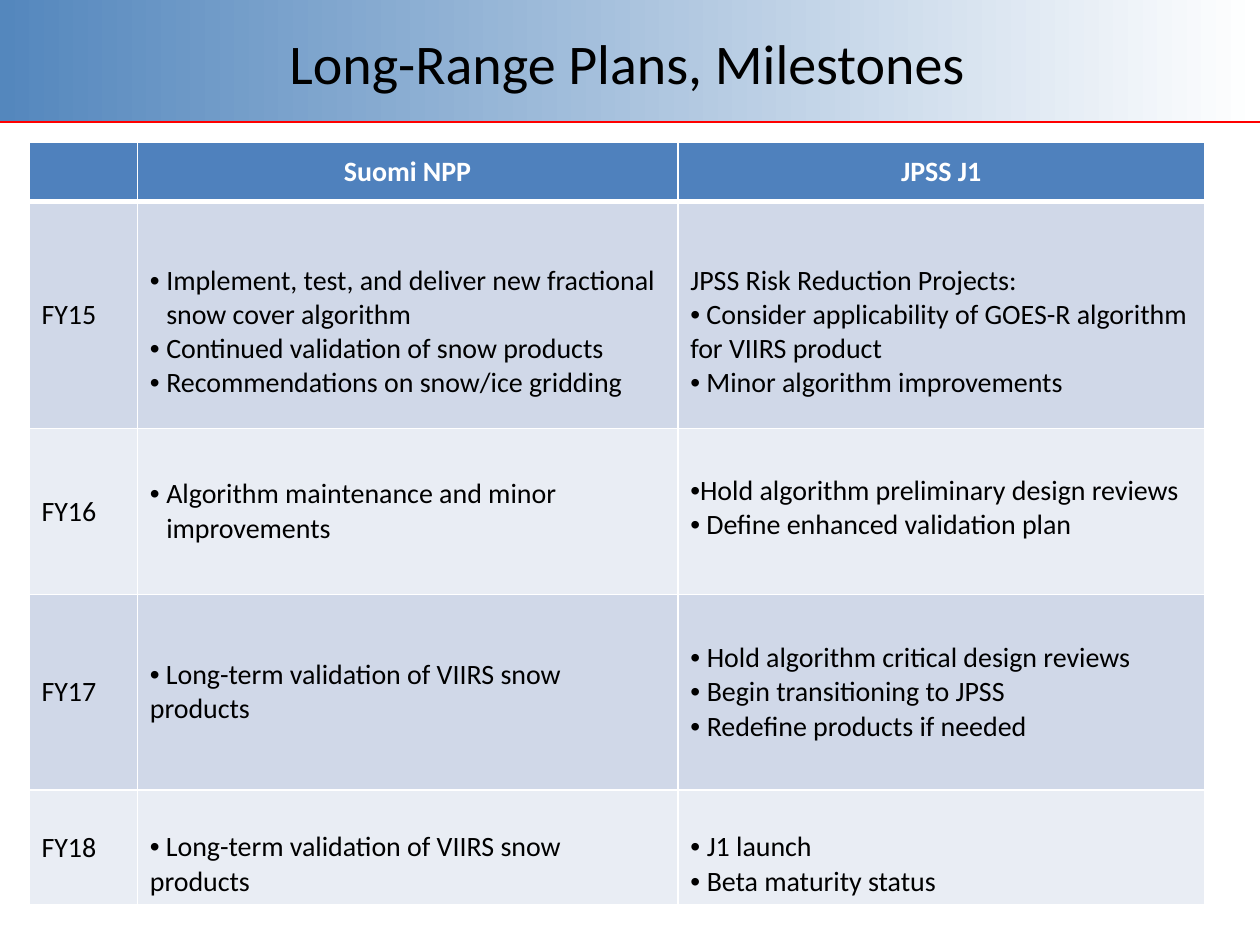
"""Build the long-range plans and milestones slide."""
from lxml import etree
from pptx import Presentation
from pptx.dml.color import RGBColor
from pptx.enum.shapes import MSO_CONNECTOR, MSO_SHAPE
from pptx.enum.text import MSO_ANCHOR, PP_ALIGN
from pptx.oxml.ns import qn
from pptx.util import Inches, Pt

CENTER, LEFT = PP_ALIGN.CENTER, PP_ALIGN.LEFT
MIDDLE = MSO_ANCHOR.MIDDLE
RECTANGLE, STRAIGHT = MSO_SHAPE.RECTANGLE, MSO_CONNECTOR.STRAIGHT

BLACK = RGBColor(0x00, 0x00, 0x00)
WHITE = RGBColor(0xFF, 0xFF, 0xFF)
RED = RGBColor(0xFF, 0x00, 0x00)
BANNER_BLUE = RGBColor(0x54, 0x87, 0xBD)
HEADER_BLUE = RGBColor(0x4F, 0x81, 0xBD)
BANDS = (RGBColor(0xD0, 0xD8, 0xE8), RGBColor(0xE9, 0xED, 0xF4))

FONT = "Calibri"
BANNER_HEIGHT = 0.97
COLUMN_WIDTHS = (0.86, 4.29, 4.18)
ROW_HEIGHTS = (0.47, 1.8, 1.32, 1.55, 0.91)
HANGING = 0.13
LINE_HEIGHT = 0.27
PLAIN, BULLET, HANGING_BULLET = "plain", "bullet", "hanging bullet"

HEADERS = ("", "Suomi NPP", "JPSS J1")
YEARS = ("FY15", "FY16", "FY17", "FY18")
NPP_PLANS = (
    [(HANGING_BULLET, "Implement, test, and deliver new fractional snow cover algorithm"),
     (HANGING_BULLET, "Continued validation of snow products"),
     (HANGING_BULLET, "Recommendations on snow/ice gridding")],
    [(HANGING_BULLET, "Algorithm maintenance and minor improvements")],
    [(BULLET, " Long-term validation of VIIRS snow products")],
    [(BULLET, " Long-term validation of VIIRS snow products")],
)
J1_PLANS = (
    [(PLAIN, "JPSS Risk Reduction Projects:"),
     (BULLET, " Consider applicability of GOES-R algorithm for VIIRS product"),
     (BULLET, " Minor algorithm improvements")],
    [(BULLET, "Hold algorithm preliminary design reviews"),
     (BULLET, " Define enhanced validation plan")],
    [(HANGING_BULLET, "Hold algorithm critical design reviews"),
     (HANGING_BULLET, "Begin transitioning to JPSS"),
     (HANGING_BULLET, "Redefine products if needed")],
    [(HANGING_BULLET, "J1 launch"),
     (HANGING_BULLET, "Beta maturity status")],
)
LOWERED_ROWS = (1, 4)


def add_bullet(paragraph, hanging):
    """Give a paragraph a black round bullet, with an optional hanging indent."""
    properties = paragraph._p.get_or_add_pPr()
    indent = Inches(HANGING) if hanging else 0
    properties.set("marL", str(indent))
    properties.set("indent", str(-indent))
    color = etree.SubElement(properties, qn("a:buClr"))
    etree.SubElement(color, qn("a:srgbClr"), val=str(BLACK))
    etree.SubElement(properties, qn("a:buFont"), typeface="Arial")
    etree.SubElement(properties, qn("a:buChar"), char="•")


def write_text(paragraph, text, size=16, color=BLACK, bold=False, align=LEFT, style=PLAIN):
    """Write one formatted paragraph."""
    paragraph.alignment = align
    if style != PLAIN:
        add_bullet(paragraph, style == HANGING_BULLET)
    paragraph.font.size = Pt(size)
    if text:
        run = paragraph.add_run()
        run.text = text
        run.font.name = FONT
        run.font.size = Pt(size)
        run.font.bold = bold
        run.font.color.rgb = color


def set_borders(cell, top=1, bottom=1):
    """Draw white borders around a cell, ahead of its fill."""
    properties = cell._tc.get_or_add_tcPr()
    widths = {"a:lnL": 1, "a:lnR": 1, "a:lnT": top, "a:lnB": bottom}
    for position, (tag, width) in enumerate(widths.items()):
        line = etree.Element(qn(tag), w=str(Pt(width)))
        fill = etree.SubElement(line, qn("a:solidFill"))
        etree.SubElement(fill, qn("a:srgbClr"), val=str(WHITE))
        properties.insert(position, line)


def fill_cell(cell, entries, fill, **text_format):
    """Fill a cell with colour and its styled paragraphs."""
    cell.fill.solid()
    cell.fill.fore_color.rgb = fill
    cell.vertical_anchor = MIDDLE
    frame = cell.text_frame
    for index, (style, text) in enumerate(entries):
        paragraph = frame.add_paragraph() if index else frame.paragraphs[0]
        write_text(paragraph, text, style=style, **text_format)


def add_banner(slide, width):
    """Add the gradient banner and the red rule below it."""
    banner = slide.shapes.add_shape(RECTANGLE, 0, 0, width, Inches(BANNER_HEIGHT))
    banner.shadow.inherit = False
    banner.line.fill.background()
    banner.fill.gradient()
    banner.fill.gradient_angle = 0
    for stop, color in zip(banner.fill.gradient_stops, (BANNER_BLUE, WHITE)):
        stop.color.rgb = color
    bottom = Inches(BANNER_HEIGHT)
    rule = slide.shapes.add_connector(STRAIGHT, 0, bottom, width, bottom)
    rule.line.color.rgb = RED
    rule.line.width = Pt(1.25)
    etree.SubElement(rule._element.spPr, qn("a:effectLst"))


def place_title(slide, text):
    """Place the title in front of the banner."""
    title = slide.shapes.title
    title.left, title.top = Inches(0.48), Inches(0.04)
    title.width, title.height = Inches(9), Inches(0.9)
    title.text_frame.vertical_anchor = MIDDLE
    write_text(title.text_frame.paragraphs[0], text, size=32, align=CENTER)
    slide.shapes._spTree.append(title._element)


def add_plan_table(slide):
    """Add the table of plans by fiscal year and satellite."""
    frame = slide.shapes.add_table(
        len(ROW_HEIGHTS), len(COLUMN_WIDTHS), Inches(0.23), Inches(1.13),
        Inches(sum(COLUMN_WIDTHS)), Inches(sum(ROW_HEIGHTS)))
    table = frame.table
    table.horz_banding = False
    for column, width in zip(table.columns, COLUMN_WIDTHS):
        column.width = Inches(width)
    for row, height in zip(table.rows, ROW_HEIGHTS):
        row.height = Inches(height)
    for column, header in enumerate(HEADERS):
        cell = table.cell(0, column)
        fill_cell(cell, [(PLAIN, header)], HEADER_BLUE, color=WHITE, bold=True, align=CENTER)
        set_borders(cell, bottom=3)
    for row, (year, npp, j1) in enumerate(zip(YEARS, NPP_PLANS, J1_PLANS), start=1):
        for column, entries in enumerate(([(PLAIN, year)], npp, j1)):
            cell = table.cell(row, column)
            fill_cell(cell, entries, BANDS[(row - 1) % 2])
            set_borders(cell, top=3 if row == 1 else 1)
            if column and row in LOWERED_ROWS:
                cell.margin_top = Inches(0.05 + LINE_HEIGHT)
    table.cell(2, 2).margin_bottom = Inches(0.11)


def main():
    """Build and save the presentation."""
    presentation = Presentation()
    presentation.slide_width, presentation.slide_height = Inches(10), Inches(7.5)
    slide = presentation.slides.add_slide(presentation.slide_layouts[5])
    add_banner(slide, presentation.slide_width)
    place_title(slide, "Long-Range Plans, Milestones")
    add_plan_table(slide)
    presentation.save("out.pptx")


if __name__ == "__main__":
    main()
